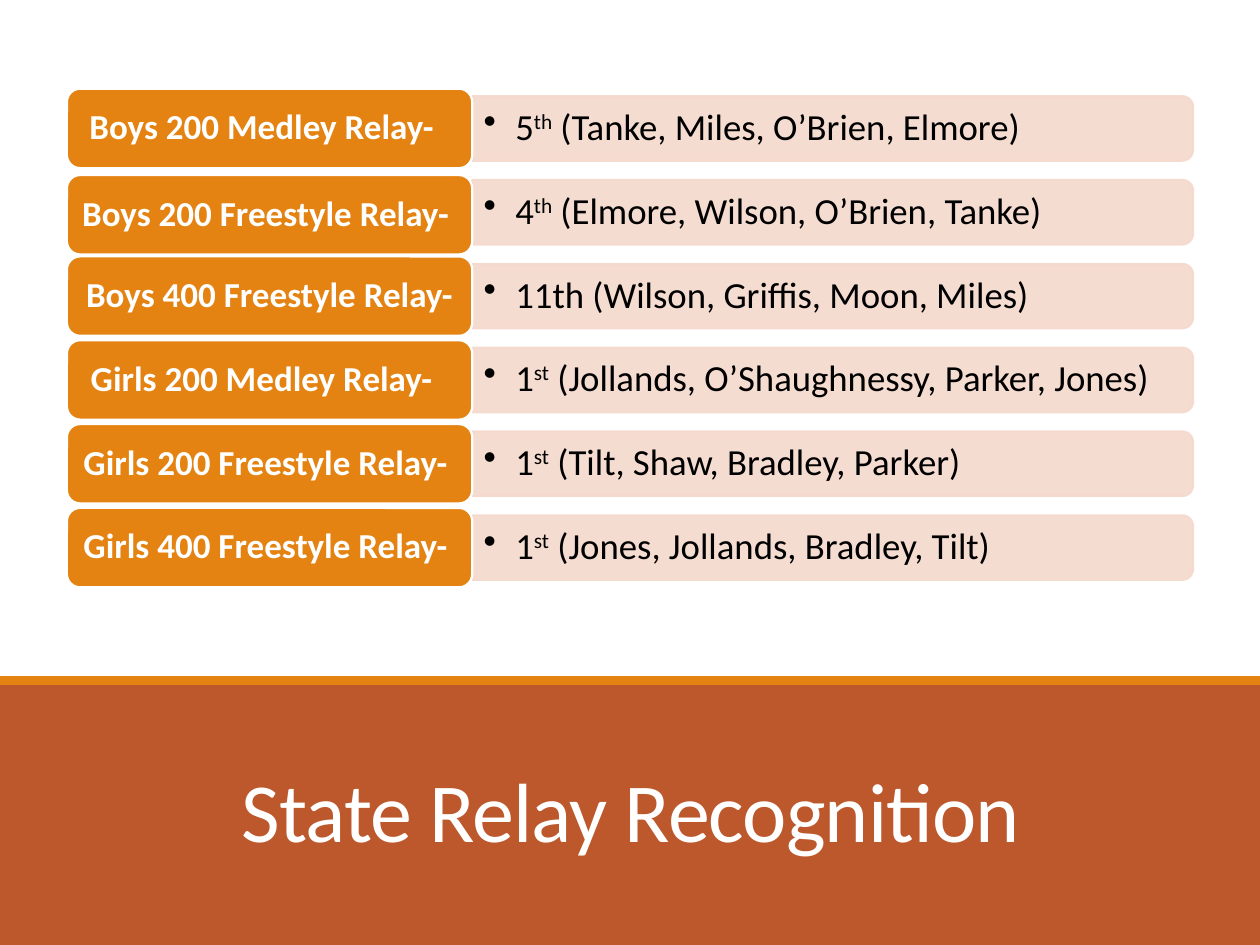
from lxml import etree
from pptx import Presentation
from pptx.dml.color import RGBColor
from pptx.enum.shapes import MSO_SHAPE
from pptx.enum.text import MSO_ANCHOR, PP_ALIGN
from pptx.oxml.ns import qn
from pptx.util import Cm, Pt

ORANGE = RGBColor(0xE4, 0x83, 0x12)
RUST = RGBColor(0xBD, 0x58, 0x2C)
PEACH = RGBColor(0xF5, 0xD9, 0xCC)
WHITE = RGBColor(0xFF, 0xFF, 0xFF)
BLACK = RGBColor(0x00, 0x00, 0x00)


def write_text(shape, *parts, size, color, bold=False, align=PP_ALIGN.LEFT,
               anchor=MSO_ANCHOR.MIDDLE, line_spacing=0.9, tracking=0,
               bullet=None, left=0.25, right=0.25, vertical=0.1):
    """Write one paragraph; every second part is superscript."""
    frame = shape.text_frame
    frame.word_wrap = True
    frame.vertical_anchor = anchor
    frame.margin_left, frame.margin_right = Cm(left), Cm(right)
    frame.margin_top = frame.margin_bottom = Cm(vertical)
    paragraph = frame.paragraphs[0]
    paragraph.alignment = align
    paragraph.line_spacing = line_spacing
    if bullet:
        properties = paragraph._p.get_or_add_pPr()
        properties.set("marL", str(Cm(0.64)))
        properties.set("indent", str(-Cm(0.64)))
        etree.SubElement(properties, qn("a:buChar")).set("char", bullet)
    for index, part in enumerate(parts):
        if not part:
            continue
        run = paragraph.add_run()
        run.text = part
        run.font.name = "Calibri"
        run.font.size = Pt(size)
        run.font.bold = bold
        run.font.color.rgb = color
        if index % 2:
            run.font._element.set("baseline", "30000")
        if tracking:
            run.font._element.set("spc", str(tracking))


def add_block(kind, left, top, width, height, fill, line=None):
    block = slide.shapes.add_shape(kind, Cm(left), Cm(top), Cm(width), Cm(height))
    block.shadow.inherit = False
    block.fill.solid()
    block.fill.fore_color.rgb = fill
    if line is None:
        block.line.fill.background()
    else:
        block.line.color.rgb = line
        block.line.width = Pt(1.25)
    return block


presentation = Presentation()
presentation.slide_width, presentation.slide_height = Cm(25.4), Cm(19.05)
slide = presentation.slides.add_slide(presentation.slide_layouts[6])

# Title band with its accent stripe
add_block(MSO_SHAPE.RECTANGLE, 0, 13.77, 25.4, 5.28, RUST)
title = slide.shapes.add_textbox(Cm(2.24), Cm(14.58), Cm(20.95), Cm(2.87))
write_text(title, "State Relay Recognition", size=48, color=WHITE,
           align=PP_ALIGN.CENTER, anchor=MSO_ANCHOR.BOTTOM,
           line_spacing=0.85, tracking=-50, vertical=0.13)
add_block(MSO_SHAPE.RECTANGLE, 0, 13.63, 25.4, 0.18, ORANGE)

# Relay, place, ordinal, swimmers, extra right margin, label drop
relays = [
    ("Boys 200 Medley Relay-", "5", "th", " (Tanke, Miles, O’Brien, Elmore)", 0.32, 0),
    ("Boys 200 Freestyle Relay-", "4", "th", " (Elmore, Wilson, O’Brien, Tanke)", 0.16, 0.05),
    ("Boys 400 Freestyle Relay-", "11th", "", " (Wilson, Griffis, Moon, Miles)", 0, 0),
    ("Girls 200 Medley Relay-", "1", "st", " (Jollands, O’Shaughnessy, Parker, Jones)", 0.32, 0),
    ("Girls 200 Freestyle Relay-", "1", "st", " (Tilt, Shaw, Bradley, Parker)", 0.16, 0),
    ("Girls 400 Freestyle Relay-", "1", "st", " (Jones, Jollands, Bradley, Tilt)", 0.16, 0),
]
FIRST_MIDDLE, PITCH = 2.59, 1.69
LABEL_LEFT, LABEL_WIDTH, LABEL_HEIGHT = 1.35, 8.17, 1.6
BAR_LEFT, BAR_LENGTH, BAR_HEIGHT = 9.52, 14.53, 1.3

for row, (relay, place, ordinal, swimmers, extra, drop) in enumerate(relays):
    middle = FIRST_MIDDLE + row * PITCH

    # Result bar: a quarter turn puts the rounded corners on the right
    bar = add_block(MSO_SHAPE.ROUND_2_SAME_RECTANGLE,
                    BAR_LEFT + (BAR_LENGTH - BAR_HEIGHT) / 2, middle - BAR_LENGTH / 2,
                    BAR_HEIGHT, BAR_LENGTH, PEACH, line=PEACH)
    bar.rotation = 90
    for paint in bar._element.spPr.iter(qn("a:srgbClr")):
        etree.SubElement(paint, qn("a:alpha")).set("val", "90000")

    # Place and swimmers
    result = slide.shapes.add_textbox(Cm(BAR_LEFT), Cm(middle - 0.58), Cm(14.47), Cm(1.16))
    write_text(result, place, ordinal, swimmers, size=21, color=BLACK,
               bullet="•", left=0.23, right=0.23)

    # Relay label
    label = add_block(MSO_SHAPE.ROUNDED_RECTANGLE, LABEL_LEFT,
                      middle - LABEL_HEIGHT / 2 + drop,
                      LABEL_WIDTH, LABEL_HEIGHT, ORANGE, line=WHITE)
    write_text(label, relay, size=20, color=WHITE, bold=True,
               align=PP_ALIGN.CENTER, left=0.2, right=0.2 + extra)

presentation.save("out.pptx")
